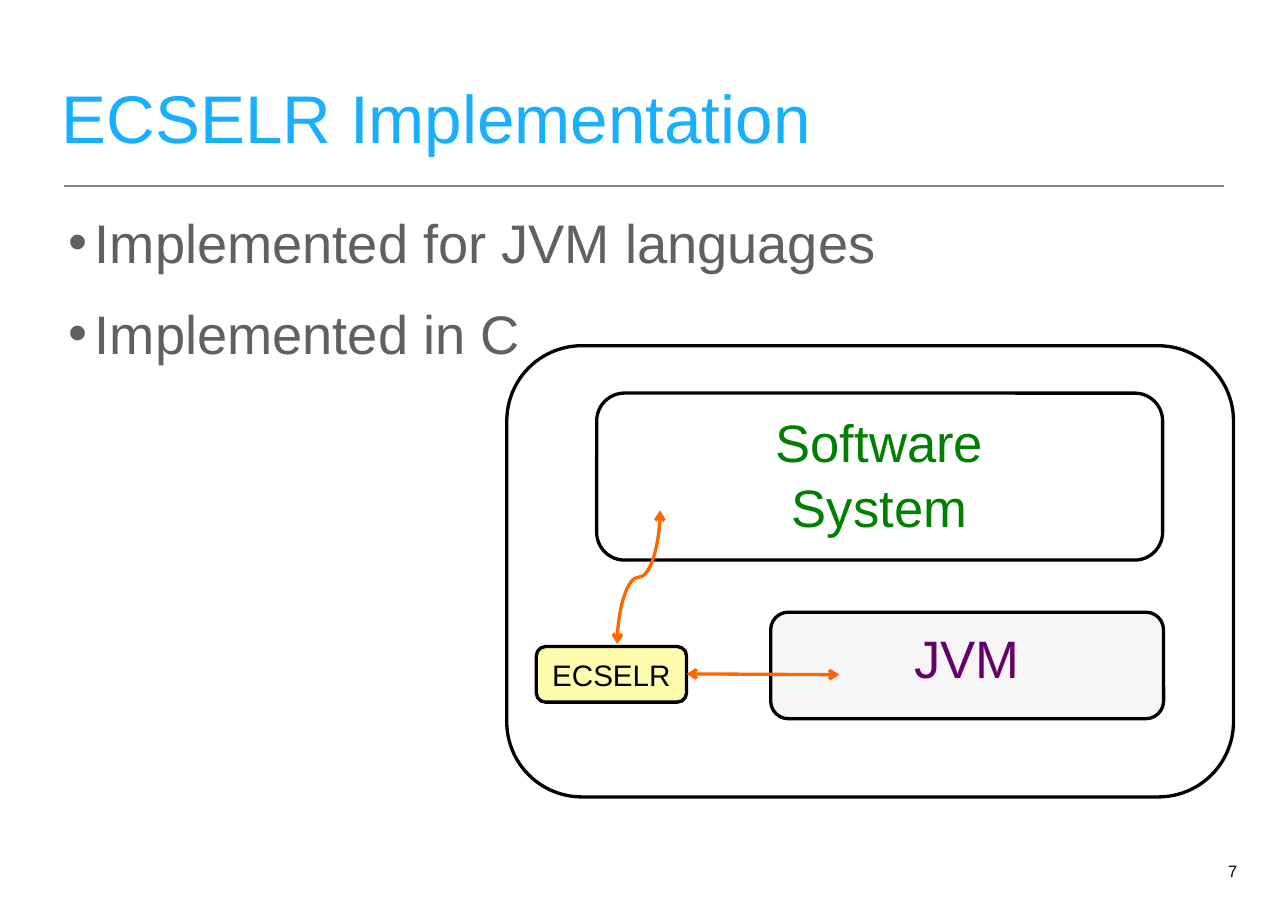
from lxml.etree import SubElement
from pptx import Presentation
from pptx.dml.color import RGBColor
from pptx.enum.shapes import MSO_CONNECTOR, MSO_SHAPE
from pptx.enum.text import MSO_ANCHOR, PP_ALIGN
from pptx.oxml.ns import qn
from pptx.util import Pt


def paint(color, code):
    color.rgb = RGBColor.from_string(code)


def write(frame, lines, size, code, align=PP_ALIGN.LEFT, space=1.0, gap=0, dot=False):
    for i, line in enumerate(lines):
        para = frame.paragraphs[0] if i == 0 else frame.add_paragraph()
        para.alignment = align
        para.line_spacing = space
        para.space_before = Pt(gap if i else 0)
        if dot:
            props = para._p.get_or_add_pPr()
            props.set("marL", str(Pt(16)))
            props.set("indent", str(-Pt(16)))
            SubElement(props, qn("a:buFont"), typeface="Arial")
            SubElement(props, qn("a:buChar"), char="•")
        run = para.add_run()
        run.text = line
        run.font.name = "Arial"
        run.font.size = Pt(size)
        paint(run.font.color, code)


def set_frame(frame, anchor, side, edge):
    frame.word_wrap = True
    frame.vertical_anchor = anchor
    frame.margin_left = frame.margin_right = Pt(side)
    frame.margin_top = frame.margin_bottom = Pt(edge)


def add_text(slide, place, lines, size, code, anchor, side, **style):
    box = slide.shapes.add_textbox(*map(Pt, place))
    set_frame(box.text_frame, anchor, side, 3)
    write(box.text_frame, lines, size, code, **style)


def add_box(slide, place, fill=None, alpha=None):
    box = slide.shapes.add_shape(MSO_SHAPE.ROUNDED_RECTANGLE, *map(Pt, place))
    box.shadow.inherit = False
    paint(box.line.color, "000000")
    box.line.width = Pt(2)
    if fill:
        box.fill.solid()
        paint(box.fill.fore_color, fill)
    else:
        box.fill.background()
    if alpha:
        tint = box._element.spPr.find(qn("a:solidFill"))[0]
        SubElement(tint, qn("a:alpha"), val=str(alpha * 1000))
    return box


def add_label(box, lines, size, code, anchor=MSO_ANCHOR.TOP, space=1.04):
    set_frame(box.text_frame, anchor, 3, 3.6)
    write(box.text_frame, lines, size, code, PP_ALIGN.CENTER, space)


def add_line(slide, kind, ends, code, width):
    line = slide.shapes.add_connector(kind, *map(Pt, ends))
    paint(line.line.color, code)
    line.line.width = Pt(width)
    SubElement(line._element.spPr, qn("a:effectLst"))
    return line


def add_arrow(slide, kind, ends, turn=0):
    arrow = add_line(slide, kind, ends, "FF6600", 2)
    stroke = arrow.line._get_or_add_ln()
    for end in ("a:headEnd", "a:tailEnd"):
        SubElement(stroke, qn(end), type="arrow")
    if turn:
        arrow._element.spPr.find(qn("a:xfrm")).set("rot", str(turn * 60000))


def main():
    deck = Presentation()
    deck.slide_width, deck.slide_height = Pt(783.36), Pt(558.72)
    slide = deck.slides.add_slide(deck.slide_layouts[6])

    add_line(slide, MSO_CONNECTOR.STRAIGHT, (39, 113, 744.5, 113), "888888", 1)
    add_text(slide, (34.6, 18.7, 714.2, 80), ["ECSELR Implementation"],
             41, "19AFFF", MSO_ANCHOR.BOTTOM, 3)
    add_text(slide, (734.4, 514.8, 23, 29.5), ["7"], 10, "000000",
             MSO_ANCHOR.MIDDLE, 5, align=PP_ALIGN.RIGHT)

    agent = add_box(slide, (326.2, 393.1, 91.4, 33.8), "FFFDAD")
    add_label(agent, ["ECSELR"], 18, "000000", MSO_ANCHOR.MIDDLE, 1.0)
    engine = add_box(slide, (468.7, 372.2, 239, 64.8), "BFBFBF", 13)
    add_label(engine, ["JVM"], 32, "660066")
    system = add_box(slide, (362.9, 239, 344.2, 101.5))
    add_label(system, ["Software", "System"], 32, "008000")
    add_box(slide, (308.2, 210.2, 442, 274.3))

    add_arrow(slide, MSO_CONNECTOR.CURVE, (429.1, 364.1, 347.8, 337.9), 90)
    add_arrow(slide, MSO_CONNECTOR.STRAIGHT, (417.6, 409.7, 510.5, 410.2))
    add_text(slide, (36.7, 122.4, 704.9, 290.9),
             ["Implemented for JVM languages", "Implemented in C"],
             33, "606060", MSO_ANCHOR.TOP, 5, space=1.05, gap=13.5, dot=True)

    deck.save("out.pptx")


if __name__ == "__main__":
    main()
